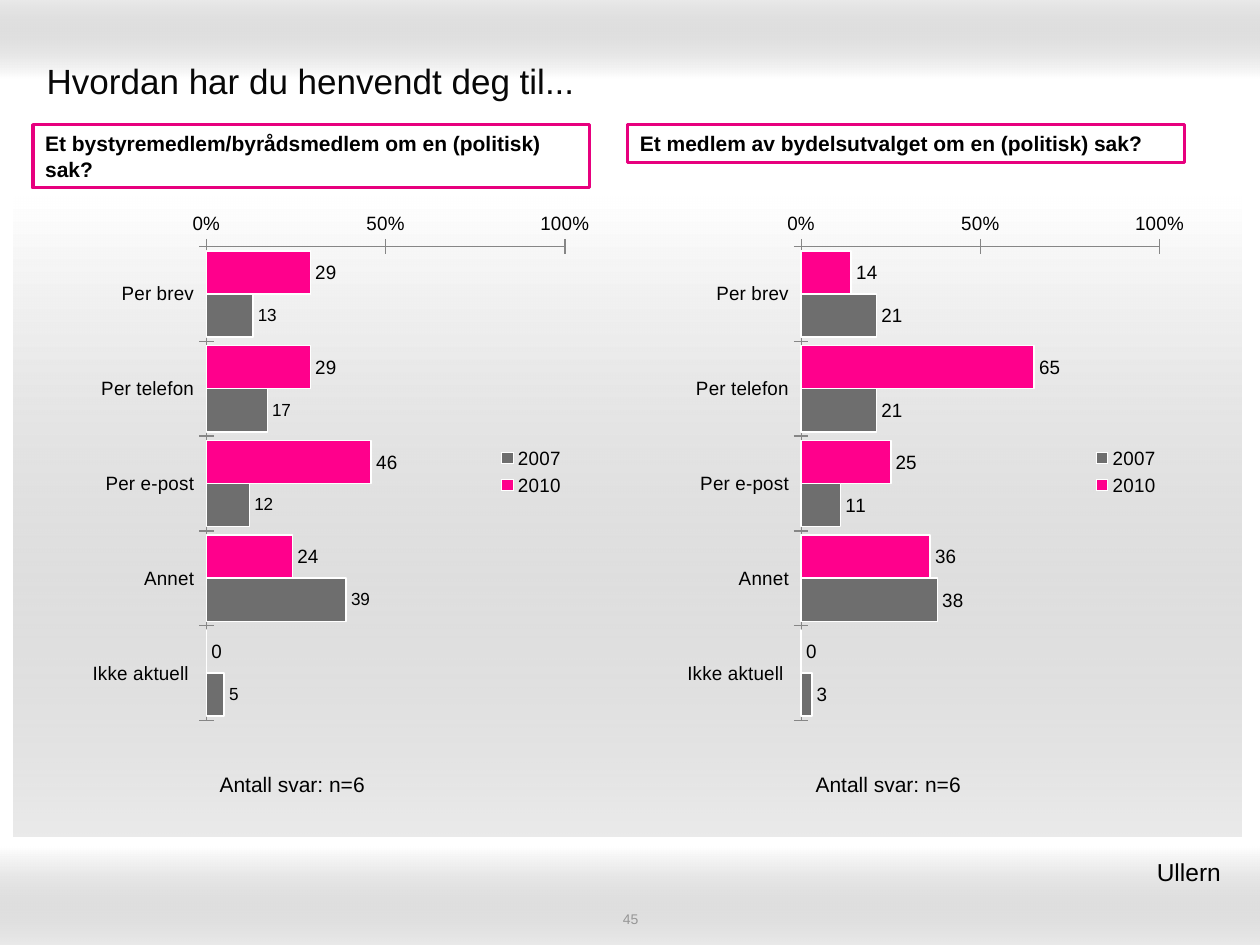
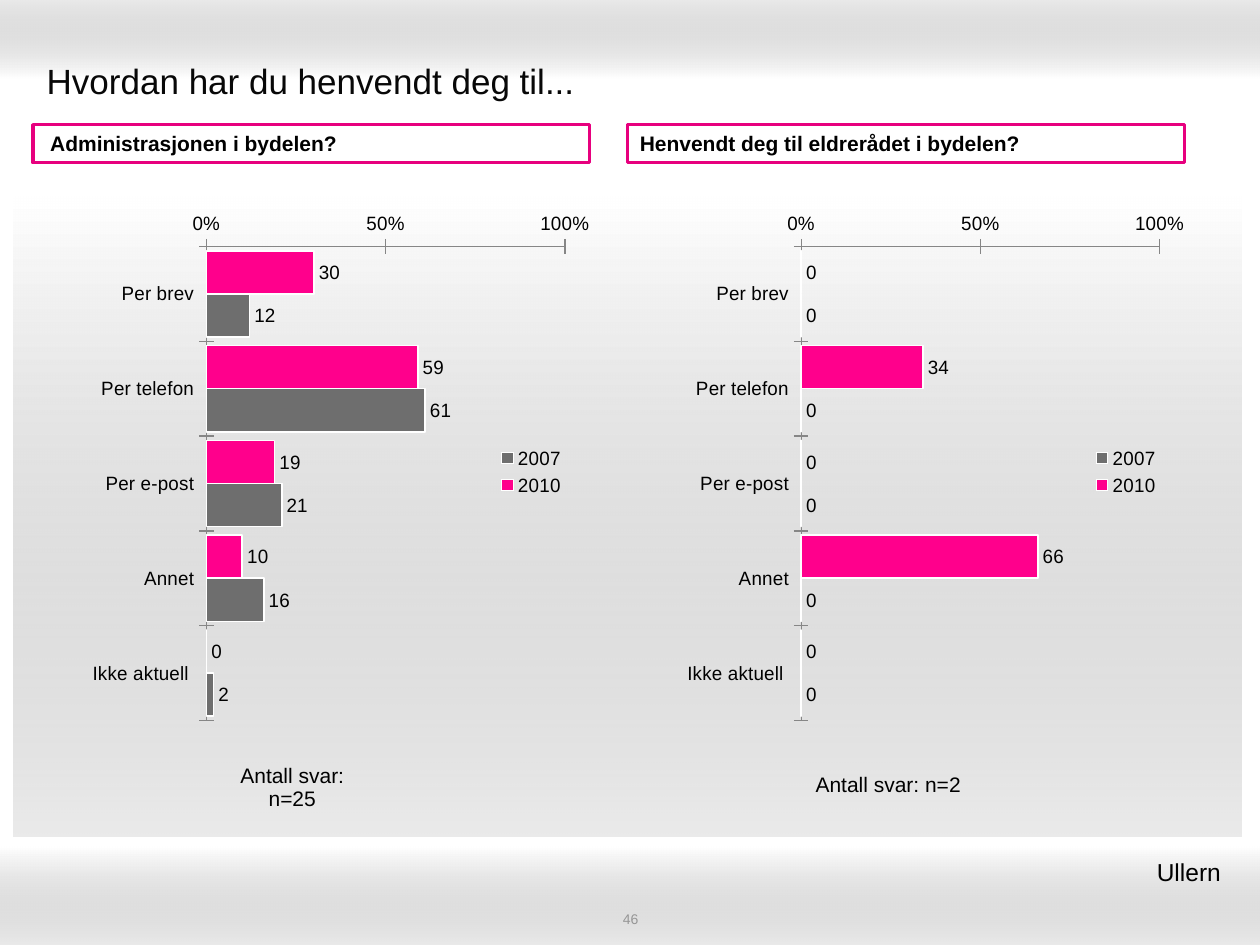
from dataclasses import dataclass

from lxml.etree import SubElement
from pptx import Presentation
from pptx.chart.data import CategoryChartData
from pptx.dml.color import RGBColor
from pptx.enum.chart import XL_CHART_TYPE as ChartType, XL_LABEL_POSITION as LabelPos
from pptx.enum.chart import XL_LEGEND_POSITION as LegendPos, XL_TICK_MARK as Tick
from pptx.enum.shapes import MSO_SHAPE as Shape
from pptx.enum.text import MSO_ANCHOR as Anchor, PP_ALIGN as Align
from pptx.oxml import parse_xml
from pptx.oxml.ns import nsdecls, qn
from pptx.util import Inches, Pt

FONT = "Arial"
BLACK = RGBColor(0, 0, 0)
WHITE = RGBColor(255, 255, 255)
TITLE_INK = RGBColor(0x08, 0x08, 0x08)
PAGE_GREY = RGBColor(0x96, 0x96, 0x96)
BAND_GREY = RGBColor(0x99, 0x99, 0x99)
AXIS_GREY = RGBColor(0x86, 0x86, 0x86)
FRAME_PINK = RGBColor(0xE7, 0x00, 0x7E)
BAR_PINK = RGBColor(0xFF, 0x00, 0x8C)
BAR_GREY = RGBColor(0x6E, 0x6E, 0x6E)

TITLE = "Hvordan har du henvendt deg til..."
DISTRICT = "Ullern"
CATEGORIES = ("Per brev", "Per telefon", "Per e-post", "Annet", "Ikke aktuell ")
SERIES_COLORS = {"2010": BAR_PINK, "2007": BAR_GREY}
PANEL_LEFTS = (0.26, 4.98)
NOTE_LEFTS = (1.61, 6.34)
CHART_W, CHART_H = 4.42, 4.12
PLOT = {"x": 1.41 / CHART_W, "y": 0.27 / CHART_H, "w": 2.91 / CHART_W, "h": 3.77 / CHART_H}
NO_GRID_STYLE = "{2D5ABB26-0587-4C30-8999-92F81FD0307C}"


@dataclass
class Band:
    """A background strip fading from white to grey."""
    left: float
    top: float
    width: float
    height: float
    angle: int


@dataclass
class Panel:
    """One question with its answers in 2010 and 2007."""
    question: str
    values_2010: tuple
    values_2007: tuple
    answers: int
    heading_h: float = 0.3
    size_2007: int = 11


BANDS = (
    Band(0, 0, 10, 0.62, 90),
    Band(0, 6.72, 10, 0.78, 270),
    Band(0.11, 1.56, 9.74, 5.08, 270),
)
PAGES = {
    45: (
        Panel("Et bystyremedlem/byrådsmedlem om en (politisk) sak?",
              (29, 29, 46, 24, 0), (13, 17, 12, 39, 5), 6, 0.5, 10),
        Panel("Et medlem av bydelsutvalget om en (politisk) sak?",
              (14, 65, 25, 36, 0), (21, 21, 11, 38, 3), 6),
    ),
    46: (
        Panel(" Administrasjonen i bydelen?",
              (30, 59, 19, 10, 0), (12, 61, 21, 16, 2), 25),
        Panel("Henvendt deg til eldrerådet i bydelen?",
              (0, 34, 0, 66, 0), (0, 0, 0, 0, 0), 2),
    ),
}


def box(left: float, top: float, width: float, height: float) -> tuple:
    """Convert a rectangle in inches to lengths."""
    return tuple(Inches(v) for v in (left, top, width, height))


def set_font(font, size: float, color: RGBColor = BLACK, bold: bool = False) -> None:
    """Apply the deck's typeface with the given format."""
    font.name, font.size, font.bold = FONT, Pt(size), bold
    font.color.rgb = color


def write(tf, text: str, size: float = 12, color: RGBColor = BLACK, bold: bool = False,
          align=Align.LEFT, anchor=Anchor.TOP, spacing: float = 1.0) -> None:
    """Put one formatted paragraph into a text frame."""
    tf.word_wrap = True
    tf.vertical_anchor = anchor
    p = tf.paragraphs[0]
    p.alignment, p.line_spacing = align, spacing
    r = p.add_run()
    r.text = text
    set_font(r.font, size, color, bold)


def add_bands(slide, layout) -> None:
    """Place the faded bands on the shared layout."""
    for i, band in enumerate(BANDS):
        sp = slide.shapes.add_shape(
            Shape.RECTANGLE, *box(band.left, band.top, band.width, band.height))
        sp.shadow.inherit = False
        sp.line.fill.background()
        sp.fill.gradient()
        sp.fill.gradient_angle = band.angle
        for stop, color in zip(sp.fill.gradient_stops, (WHITE, BAND_GREY)):
            stop.color.rgb = color
        grey = sp.element.xpath(".//a:gs/a:srgbClr")[-1]
        SubElement(grey, qn("a:alpha")).set("val", "20000")
        layout.shapes.element.insert(2 + i, sp.element)


def clear_background(chart) -> None:
    """Make the chart see-through and fix its plot area."""
    space = chart.element
    plot_area = space.find(".//" + qn("c:plotArea"))
    clear = (f'<c:spPr {nsdecls("c", "a")}><a:noFill/>'
             '<a:ln><a:noFill/></a:ln></c:spPr>')
    space.find(qn("c:txPr")).addprevious(parse_xml(clear))
    plot_area.append(parse_xml(clear))
    for old in plot_area.findall(qn("c:layout")):
        plot_area.remove(old)
    modes = "".join(f'<c:{k}Mode val="edge"/>' for k in "xy")
    sizes = "".join(f'<c:{k} val="{v:.4f}"/>' for k, v in PLOT.items())
    plot_area.insert(0, parse_xml(
        f'<c:layout {nsdecls("c")}><c:manualLayout><c:layoutTarget val="inner"/>'
        f'{modes}{sizes}</c:manualLayout></c:layout>'))


def add_bar_chart(slide, left: float, panel: Panel) -> None:
    """Draw the answers of both years as clustered bars."""
    data = CategoryChartData(number_format="0")
    data.categories = CATEGORIES
    for name, values in zip(SERIES_COLORS, (panel.values_2010, panel.values_2007)):
        data.add_series(name, values)
    chart = slide.shapes.add_chart(
        ChartType.BAR_CLUSTERED, *box(left, 1.68, CHART_W, CHART_H), data).chart
    set_font(chart.font, 11)
    chart.has_title = False
    chart.has_legend = True
    chart.legend.position = LegendPos.RIGHT
    chart.legend.include_in_layout = False

    plot = chart.plots[0]
    plot.gap_width = 20
    plot.vary_by_categories = False
    for series, size in zip(plot.series, (11, panel.size_2007)):
        series.format.fill.solid()
        series.format.fill.fore_color.rgb = SERIES_COLORS[series.name]
        series.format.line.color.rgb = WHITE
        series.format.line.width = Pt(1)
        labels = series.data_labels
        labels.show_value = True
        labels.number_format, labels.number_format_is_linked = "0", False
        labels.position = LabelPos.OUTSIDE_END
        set_font(labels.font, size)

    for axis in (chart.category_axis, chart.value_axis):
        axis.major_tick_mark = Tick.CROSS
        axis.has_major_gridlines = False
        axis.format.line.color.rgb = AXIS_GREY
    chart.category_axis.reverse_order = True
    scale = chart.value_axis
    scale.minimum_scale, scale.maximum_scale, scale.major_unit = 0, 100, 50
    scale.tick_labels.number_format = r"General\%"
    scale.tick_labels.number_format_is_linked = False
    clear_background(chart)


def add_heading(slide, left: float, panel: Panel) -> None:
    """Draw the pink frame with the question."""
    sp = slide.shapes.add_shape(
        Shape.RECTANGLE, *box(left, 0.99, CHART_W, panel.heading_h))
    sp.shadow.inherit = False
    sp.fill.solid()
    sp.fill.fore_color.rgb = WHITE
    sp.line.color.rgb = FRAME_PINK
    sp.line.width = Pt(2)
    write(sp.text_frame, panel.question, bold=True)


def add_answer_count(slide, left: float, answers: int) -> None:
    """Add the one-cell table with the number of answers."""
    frame = slide.shapes.add_table(1, 1, *box(left, 6.03, 1.42, 0.42))
    table = frame.table
    table.first_row = table.horz_banding = False
    frame.element.find(".//" + qn("a:tableStyleId")).text = NO_GRID_STYLE
    cell = table.cell(0, 0)
    cell.fill.background()
    cell.vertical_anchor = Anchor.MIDDLE
    write(cell.text_frame, f"Antall svar: n={answers}", align=Align.CENTER, spacing=0.95)


def add_text(slide, area: tuple, text: str, margins: tuple = (0.1, 0.05), **fmt) -> None:
    """Add a text box with side and top margins."""
    tf = slide.shapes.add_textbox(*box(*area)).text_frame
    tf.margin_left = tf.margin_right = Inches(margins[0])
    tf.margin_top = tf.margin_bottom = Inches(margins[1])
    write(tf, text, **fmt)


def add_page(prs, layout, number: int, panels: tuple):
    """Build one slide with two panels."""
    slide = prs.slides.add_slide(layout)
    title = slide.shapes.title
    title.left, title.top, title.width, title.height = box(0.27, 0.36, 9.45, 0.55)
    write(title.text_frame, TITLE, size=20, color=TITLE_INK, anchor=Anchor.MIDDLE)
    for left, note_left, panel in zip(PANEL_LEFTS, NOTE_LEFTS, panels):
        add_bar_chart(slide, left, panel)
        add_heading(slide, left, panel)
        add_answer_count(slide, note_left, panel.answers)
    add_text(slide, (6.1, 6.75, 3.74, 0.34), DISTRICT, (0.15, 0.05),
             size=14, align=Align.RIGHT)
    add_text(slide, (3.42, 7.22, 3.17, 0.14), str(number), (0, 0), size=8,
             color=PAGE_GREY, align=Align.CENTER, anchor=Anchor.MIDDLE)
    return slide


def main() -> None:
    """Build and save the deck."""
    prs = Presentation()
    prs.slide_width, prs.slide_height = Inches(10), Inches(7.5)
    layout = prs.slide_layouts[5]
    slides = [add_page(prs, layout, number, panels) for number, panels in PAGES.items()]
    add_bands(slides[0], layout)
    prs.save("out.pptx")


if __name__ == "__main__":
    main()
